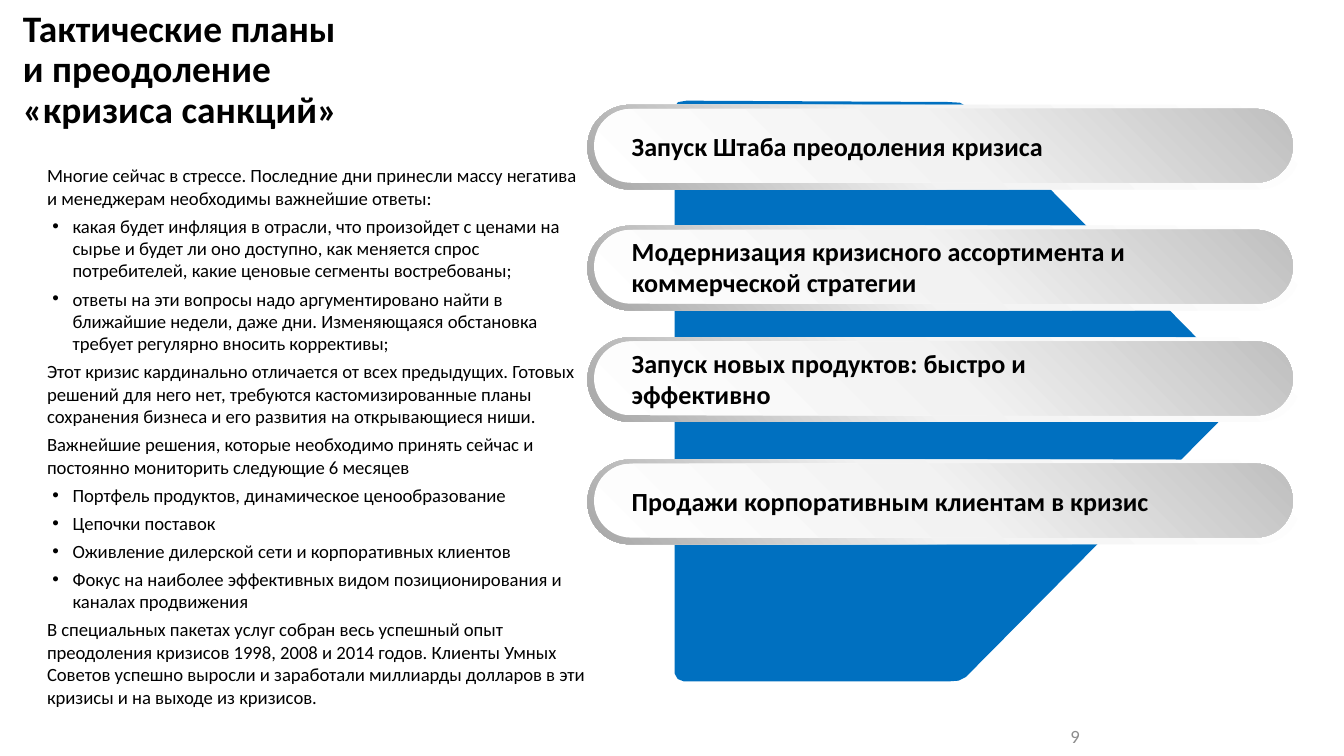
from copy import deepcopy
from dataclasses import dataclass

from lxml import etree
from pptx import Presentation
from pptx.dml.color import RGBColor
from pptx.enum.shapes import MSO_SHAPE
from pptx.enum.text import MSO_ANCHOR, MSO_AUTO_SIZE, PP_ALIGN
from pptx.oxml.ns import qn
from pptx.util import Inches, Pt

LEFT, CENTER = PP_ALIGN.LEFT, PP_ALIGN.CENTER
TOP, MIDDLE = MSO_ANCHOR.TOP, MSO_ANCHOR.MIDDLE
PILL = MSO_SHAPE.ROUNDED_RECTANGLE
FIXED = MSO_AUTO_SIZE.NONE

FONT = "Calibri"
COLORS = {
    "text": "000000", "number": "8C8C8C", "arrow": "0070C0", "white": "FFFFFF",
    "light": "F2F2F2", "silver": "BFBFBF", "gray": "A6A6A6",
}

# The page is a grid of 100 columns by 56.25 rows
CELL = Inches(0.1)
COLUMNS, ROWS = 100, 56.25


@dataclass(frozen=True)
class Area:
    column: float
    row: float
    columns: float
    rows: float

    def lengths(self) -> list[int]:
        return [round(n * CELL) for n in (self.column, self.row, self.columns, self.rows)]


@dataclass(frozen=True)
class Item:
    text: str
    bullet: bool = False


@dataclass(frozen=True)
class Step:
    row: float
    lines: tuple[str, ...]


@dataclass(frozen=True)
class Gradient:
    stops: tuple[tuple[int, str], ...]
    angle: int


TITLE = "Тактические планы \nи преодоление \n«кризиса санкций»"
ITEMS = [
    Item("Многие сейчас в стрессе. Последние дни принесли массу негатива \n"
         "и менеджерам необходимы важнейшие ответы:"),
    Item("какая будет инфляция в отрасли, что произойдет с ценами на сырье и будет ли оно "
         "доступно, как меняется спрос потребителей, какие ценовые сегменты востребованы;", True),
    Item("ответы на эти вопросы надо аргументировано найти в ближайшие недели, даже дни. "
         "Изменяющаяся обстановка требует регулярно вносить коррективы;", True),
    Item("Этот кризис кардинально отличается от всех предыдущих. Готовых решений для него нет, "
         "требуются кастомизированные планы сохранения бизнеса и его развития на "
         "открывающиеся ниши."),
    Item("Важнейшие решения, которые необходимо принять сейчас и постоянно мониторить "
         "следующие 6 месяцев"),
    Item("Портфель продуктов, динамическое ценообразование", True),
    Item("Цепочки поставок", True),
    Item("Оживление дилерской сети и корпоративных клиентов", True),
    Item("Фокус на наиболее эффективных видом позиционирования и каналах продвижения", True),
    Item("В специальных пакетах услуг собран весь успешный опыт преодоления кризисов 1998, 2008 "
         "и 2014 годов. Клиенты Умных Советов успешно выросли и заработали миллиарды долларов "
         "в эти кризисы и на выходе из кризисов."),
]
STEPS = [
    Step(7.8, ("Запуск Штаба преодоления кризиса",)),
    Step(16.8, ("Модернизация кризисного ассортимента и", "коммерческой стратегии")),
    Step(34.2, ("Продажи корпоративным клиентам в кризис",)),
    Step(25.1, ("Запуск новых продуктов: быстро и", "эффективно")),
]
RIM = Gradient(((0, "white"), (55, "light"), (100, "gray")), 225)
FACE = Gradient(((0, "white"), (51, "light"), (100, "silver")), 45)

# Outline of the arrow, in columns and rows, with softened corners
ARROW = [
    (50.3, 8.6), (50.35, 7.95), (50.5, 7.7), (51.1, 7.6), (70.5, 7.7), (71.4, 7.75),
    (72.2, 8.2), (92.8, 29.1), (71.8, 50.3), (71.3, 50.55), (70.6, 50.6), (50.9, 50.6),
    (50.5, 50.45), (50.3, 50.1),
]


def rgb(name: str) -> RGBColor:
    return RGBColor.from_string(COLORS[name])


def write(para, text: str, *, size: float, color: str = "text", bold: bool = False,
          align=LEFT, before: float = 0, spacing: float = 1) -> None:
    """Fill a paragraph; line ends become breaks of the same format."""
    para.text = text.replace("\n", "\v")
    para.alignment = align
    para.space_before = Pt(before)
    para.line_spacing = spacing
    for span in para.runs:
        span.font.name, span.font.size, span.font.bold = FONT, Pt(size), bold
        span.font.color.rgb = rgb(color)
    for line_break in para._p.findall(qn("a:br")):
        line_break.append(deepcopy(para.runs[0]._r.rPr))


def set_bullet(para, bullet: bool) -> None:
    properties = para._p.get_or_add_pPr()
    properties.set("marL", str(Inches(0.19) if bullet else 0))
    properties.set("indent", str(Inches(-0.15) if bullet else 0))
    if bullet:
        etree.SubElement(properties, qn("a:buChar"), char="•")
    else:
        etree.SubElement(properties, qn("a:buNone"))


def set_frame(shape, *, anchor=TOP, left: float = 0):
    frame = shape.text_frame
    frame.auto_size, frame.word_wrap, frame.vertical_anchor = FIXED, True, anchor
    frame.margin_left = Inches(left)
    frame.margin_top = frame.margin_right = frame.margin_bottom = 0
    return frame


def place(shape, area: Area) -> None:
    shape.left, shape.top, shape.width, shape.height = area.lengths()


def add_pill(page, area: Area, gradient: Gradient):
    pill = page.shapes.add_shape(PILL, *area.lengths())
    pill.adjustments[0] = 0.5
    pill.shadow.inherit = False
    pill.line.fill.background()
    pill.fill.gradient()
    pill.fill.gradient_angle = gradient.angle
    stops = pill._element.spPr.find(qn("a:gradFill")).find(qn("a:gsLst"))
    for stop in list(stops):
        stops.remove(stop)
    for share, color in gradient.stops:
        stop = etree.SubElement(stops, qn("a:gs"), pos=str(share * 1000))
        etree.SubElement(stop, qn("a:srgbClr"), val=COLORS[color])
    return pill


def add_step(page, step: Step) -> None:
    add_pill(page, Area(43.7, step.row, 53.1, 6.3), RIM)
    face = add_pill(page, Area(44.2, step.row + 0.3, 52, 5.5), FACE)
    frame = set_frame(face, anchor=MIDDLE, left=0.2)
    for index, line in enumerate(step.lines):
        para = frame.add_paragraph() if index else frame.paragraphs[0]
        write(para, line, size=14, bold=True)


def add_arrow(page) -> None:
    points = [(round(x * CELL), round(y * CELL)) for x, y in ARROW]
    builder = page.shapes.build_freeform(*points[0])
    builder.add_line_segments(points[1:], close=True)
    arrow = builder.convert_to_shape()
    arrow.shadow.inherit = False
    arrow.fill.solid()
    arrow.fill.fore_color.rgb = arrow.line.color.rgb = rgb("arrow")
    arrow.line.width = Pt(1.5)


def main() -> None:
    deck = Presentation()
    deck.slide_width, deck.slide_height = round(COLUMNS * CELL), round(ROWS * CELL)
    page = deck.slides.add_slide(deck.slide_layouts[1])

    # Title and list
    title, body = page.placeholders
    place(title, Area(1.7, 0.75, 33.4, 10))
    write(set_frame(title).paragraphs[0], TITLE, size=20, bold=True, spacing=0.9)
    place(body, Area(3.5, 12.2, 40.8, 39.8))
    frame = set_frame(body)
    for index, item in enumerate(ITEMS):
        para = frame.add_paragraph() if index else frame.paragraphs[0]
        set_bullet(para, item.bullet)
        write(para, item.text, size=10, before=3 if index else 0)

    # Arrow with the steps over it
    add_arrow(page)
    for step in STEPS:
        add_step(page, step)

    # Page number
    number = page.shapes.add_textbox(*Area(75.2, 53.3, 9.6, 3).lengths())
    write(set_frame(number, anchor=MIDDLE).paragraphs[0], "9", size=10, color="number",
          align=CENTER)

    deck.save("out.pptx")


if __name__ == "__main__":
    main()
